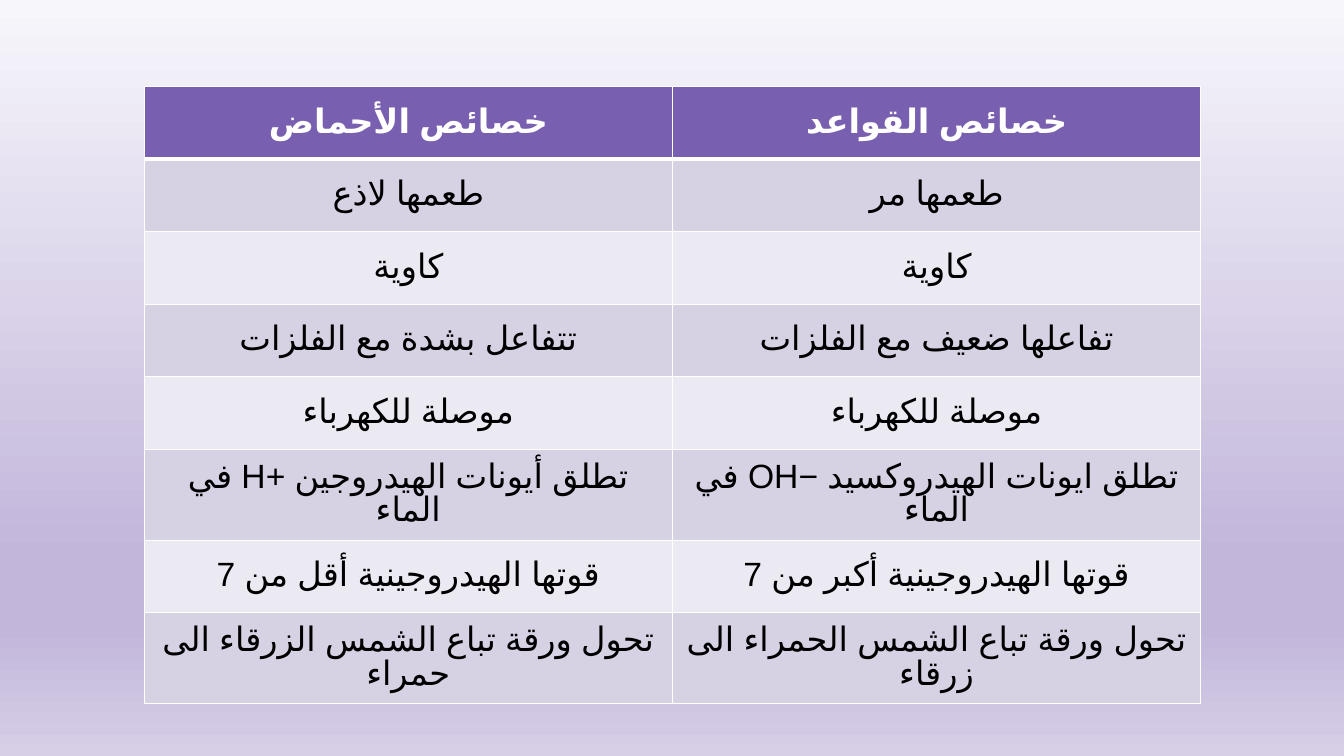
from typing import NamedTuple

import lxml.etree
import pptx
import pptx.dml.color
import pptx.enum.lang
import pptx.enum.text
import pptx.oxml
import pptx.oxml.ns
import pptx.util
from pptx.dml.color import RGBColor
from pptx.util import Inches

WHITE = RGBColor(0xFF, 0xFF, 0xFF)
BLACK = RGBColor(0x00, 0x00, 0x00)
HEADER_PURPLE = RGBColor(0x79, 0x5F, 0xAF)
DARK_BAND = RGBColor(0xD6, 0xD1, 0xE3)
LIGHT_BAND = RGBColor(0xEB, 0xE9, 0xF2)
BACKGROUND_STOPS = (
    (0, RGBColor(0xF7, 0xF6, 0xFB)),
    (74, RGBColor(0xC2, 0xB6, 0xDB)),
    (83, RGBColor(0xC2, 0xB6, 0xDB)),
    (100, RGBColor(0xD6, 0xCF, 0xE6)),
)
FONT_NAME = "Arial"
COLUMN_WIDTH = 5.24


class PropertyRow(NamedTuple):
    acids: str
    bases: str
    height: float = 0.72


ROWS = (
    PropertyRow("خصائص الأحماض", "خصائص القواعد"),
    PropertyRow("طعمها لاذع", "طعمها مر"),
    PropertyRow("كاوية", "كاوية"),
    PropertyRow("تتفاعل بشدة مع الفلزات", "تفاعلها ضعيف مع الفلزات"),
    PropertyRow("موصلة للكهرباء", "موصلة للكهرباء"),
    PropertyRow("تطلق أيونات الهيدروجين +H في الماء",
                "تطلق ايونات الهيدروكسيد −OH في الماء", 0.9),
    PropertyRow("قوتها الهيدروجينية أقل من 7", "قوتها الهيدروجينية أكبر من 7"),
    PropertyRow("تحول ورقة تباع الشمس الزرقاء الى حمراء",
                "تحول ورقة تباع الشمس الحمراء الى زرقاء", 0.9),
)


def add_element(parent, tag: str, **attributes: str):
    return lxml.etree.SubElement(parent, pptx.oxml.ns.qn(tag), attributes)


def paint_background(slide) -> None:
    fill = slide.background.fill
    fill.gradient()
    fill.gradient_angle = 270
    stop_list = slide.element.find(".//" + pptx.oxml.ns.qn("a:gsLst"))
    for stop in list(stop_list):
        stop_list.remove(stop)
    for percent, color in BACKGROUND_STOPS:
        stop = add_element(stop_list, "a:gs", pos=str(percent * 1000))
        add_element(stop, "a:srgbClr", val=str(color))


def add_borders(cell, top: float, bottom: float) -> None:
    properties = cell._tc.get_or_add_tcPr()
    for side, width in (("L", 1), ("R", 1), ("T", top), ("B", bottom)):
        line = add_element(properties, f"a:ln{side}", w=str(pptx.util.Pt(width)))
        add_element(add_element(line, "a:solidFill"), "a:srgbClr", val=str(WHITE))


def write_cell(cell, text: str, row_index: int) -> None:
    is_header = row_index == 0
    add_borders(cell, top=3 if row_index == 1 else 1, bottom=3 if is_header else 1)
    cell.fill.solid()
    band = DARK_BAND if row_index % 2 else LIGHT_BAND
    cell.fill.fore_color.rgb = HEADER_PURPLE if is_header else band
    cell.vertical_anchor = pptx.enum.text.MSO_ANCHOR.MIDDLE

    cell.text_frame.text = text
    paragraph = cell.text_frame.paragraphs[0]
    paragraph.alignment = pptx.enum.text.PP_ALIGN.CENTER
    paragraph.line_spacing = 0.9
    paragraph._p.get_or_add_pPr().set("rtl", "1")
    font = paragraph.runs[0].font
    font.name = FONT_NAME
    font.size = pptx.util.Pt(24)
    font.bold = is_header
    font.language_id = pptx.enum.lang.MSO_LANGUAGE_ID.ARABIC
    font.color.rgb = WHITE if is_header else BLACK
    add_element(paragraph.runs[0]._r.get_or_add_rPr(), "a:cs", typeface=FONT_NAME)


def add_properties_table(slide) -> None:
    height = sum(row.height for row in ROWS)
    table = slide.shapes.add_table(
        len(ROWS), 2, Inches(1.43), Inches(0.86),
        Inches(2 * COLUMN_WIDTH), Inches(height)).table
    for column in table.columns:
        column.width = Inches(COLUMN_WIDTH)
    for row_index, row in enumerate(ROWS):
        table.rows[row_index].height = Inches(row.height)
        for column_index, text in enumerate((row.acids, row.bases)):
            write_cell(table.cell(row_index, column_index), text, row_index)


def main() -> None:
    presentation = pptx.Presentation()
    presentation.slide_width = Inches(13.33)
    presentation.slide_height = Inches(7.5)
    # Blank layout with a purple gradient
    slide = presentation.slides.add_slide(presentation.slide_layouts[6])
    paint_background(slide)
    # Acids and bases compared
    add_properties_table(slide)
    presentation.save("out.pptx")


if __name__ == "__main__":
    main()
